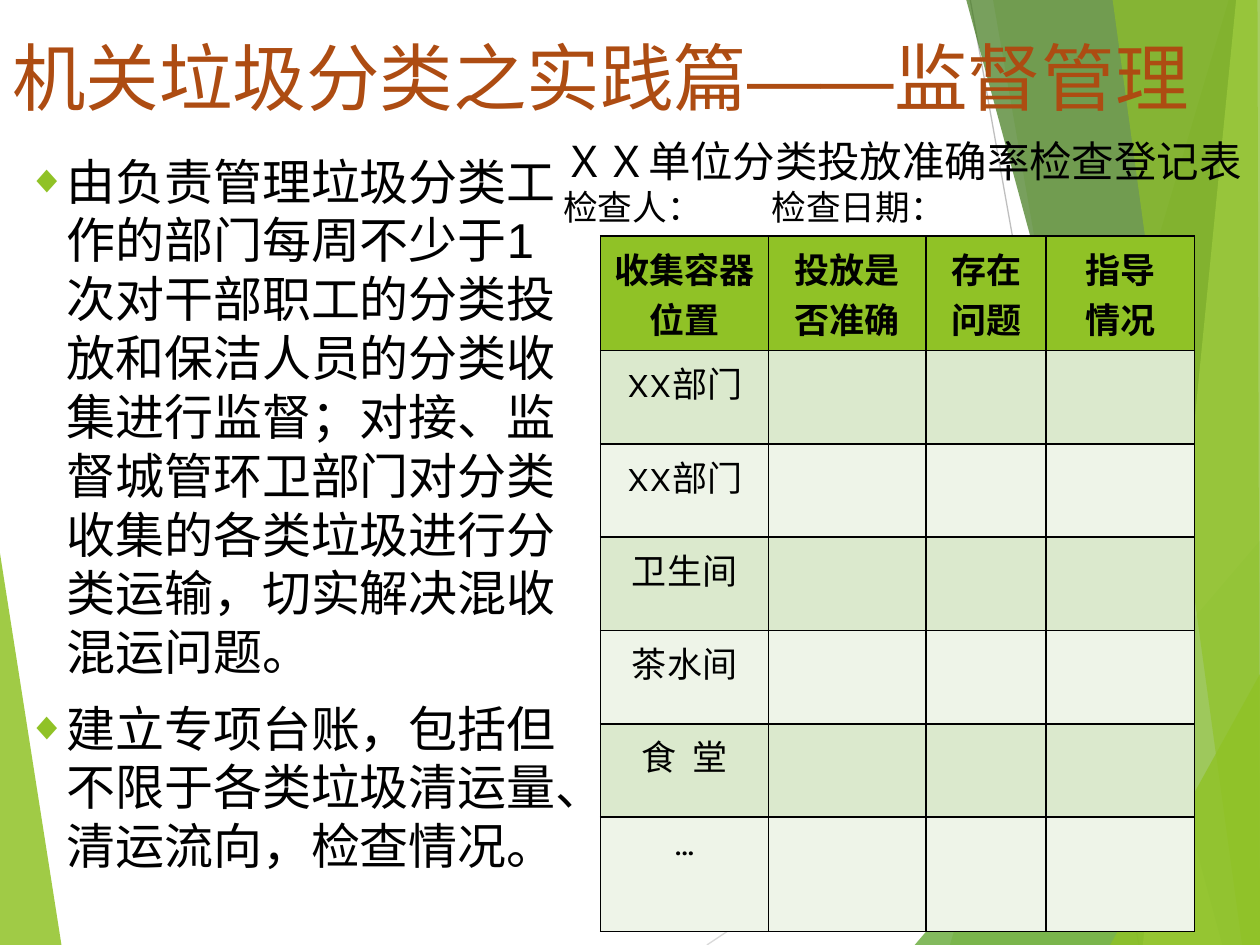
from lxml import etree
from pptx import Presentation
from pptx.dml.color import RGBColor
from pptx.enum.shapes import MSO_CONNECTOR
from pptx.enum.text import MSO_ANCHOR, MSO_AUTO_SIZE, PP_ALIGN
from pptx.oxml.ns import qn
from pptx.util import Cm, Pt

COLORS = {
    "lime": "90C226", "green": "54A021", "forest": "3F7819", "pale": "C0E474",
    "heading": "AD4C12", "black": "000000", "line": "BFBFBF", "light_line": "D9D9D9",
    "band_dark": "DBE9CD", "band_light": "EEF4E8",
}
CJK = "Noto Sans CJK SC"
FORMATS = {
    "heading": {"size": Pt(42), "name": "Arial"},
    "form_title": {"size": Pt(24.3), "name": CJK},
    "form_fields": {"size": Pt(19.8), "name": CJK},
    "body": {"size": Pt(28), "name": "Arial"},
    "header": {"size": Pt(20), "name": "Karla", "bold": True},
    "cell": {"size": Pt(20), "name": "Karla", "bold": False},
}


def add_run(paragraph, text, style, color="black", east_asian=CJK):
    run = paragraph.add_run()
    run.text = text
    for attribute, value in FORMATS[style].items():
        setattr(run.font, attribute, value)
    run.font.color.rgb = RGBColor.from_string(COLORS[color])
    properties = run.font._element
    latin = properties.find(qn("a:latin"))
    font = etree.Element(qn("a:ea"), typeface=east_asian)
    latin.addnext(font)


def add_child(parent, tag, **attributes):
    return etree.SubElement(parent, qn(tag), **attributes)


presentation = Presentation()
presentation.slide_width = Cm(25.4)
presentation.slide_height = Cm(19.05)
slide = presentation.slides.add_slide(presentation.slide_layouts[5])
shapes = slide.shapes

left_panel = ("lime", 85, [(0, 11.15), (1.24, 19.05), (0, 19.05)])
right_panels = [
    ("lime", 30, [(24.77, 0), (19.15, 19.05), (25.4, 19.05), (25.4, 0)]),
    ("lime", 20, [(20.02, 0), (23.34, 19.05), (25.4, 19.05), (25.4, 0)]),
    ("green", 72, [(18.44, 19.05), (25.4, 10.9), (25.4, 19.05)]),
    ("forest", 70, [(19.48, 0), (24.64, 19.05), (25.4, 19.05), (25.4, 0)]),
    ("pale", 70, [(24.92, 0), (23.04, 19.05), (25.4, 19.05), (25.4, 0)]),
    ("lime", 65, [(22.43, 0), (25.04, 19.05), (25.4, 19.05), (25.35, 0)]),
    ("lime", 80, [(22.38, 19.05), (25.4, 13.59), (25.4, 19.05)]),
]
thin_lines = [
    ("light_line", (14.25, 19.05, 25.4, 11.61)),
    ("line", (19.56, 0, 22.96, 19.05)),
]

for color, ends in thin_lines:
    connector = shapes.add_connector(MSO_CONNECTOR.STRAIGHT, *[Cm(end) for end in ends])
    connector.line.color.rgb = RGBColor.from_string(COLORS[color])
    connector.line.width = Pt(0.75)
    add_child(connector._element.spPr, "a:effectLst")

for color, opacity, corners in [left_panel] + right_panels:
    points = [(Cm(x), Cm(y)) for x, y in corners]
    builder = shapes.build_freeform(*points[0])
    builder.add_line_segments(points[1:], close=True)
    panel = builder.convert_to_shape()
    panel.shadow.inherit = False
    panel.fill.solid()
    panel.fill.fore_color.rgb = RGBColor.from_string(COLORS[color])
    panel.line.fill.background()
    fill_color = panel._element.spPr.find(qn("a:solidFill"))[0]
    add_child(fill_color, "a:alpha", val=str(opacity * 1000))

heading = shapes.add_textbox(Cm(0), Cm(0.53), Cm(25.4), Cm(2.06))
heading.text_frame.word_wrap = True
add_run(heading.text_frame.paragraphs[0], "机关垃圾分类之实践篇——监督管理",
        "heading", "heading", "Arial")

title = shapes.title
shapes._spTree.append(title._element)
title.left, title.top, title.width, title.height = Cm(11.1), Cm(2.59), Cm(14.3), Cm(2.13)
frame = title.text_frame
frame.word_wrap = True
frame.auto_size = MSO_AUTO_SIZE.NONE
frame.vertical_anchor = MSO_ANCHOR.MIDDLE
frame.margin_right = Cm(0)
paragraph = frame.paragraphs[0]
paragraph.alignment = PP_ALIGN.LEFT
paragraph.line_spacing = 1.0
tabs = add_child(paragraph._p.get_or_add_pPr(), "a:tabLst")
add_child(tabs, "a:tab", pos=str(Cm(4.2)), algn="l")
add_run(paragraph, "ＸＸ单位分类投放准确率检查登记表", "form_title")
paragraph.add_line_break()
add_run(paragraph, "检查人：\t检查日期：", "form_fields")

duties = [
    "由负责管理垃圾分类工作的部门每周不少于1次对干部职工的分类投放和保洁人员的分类收集进行监督；"
    "对接、监督城管环卫部门对分类收集的各类垃圾进行分类运输，切实解决混收混运问题。",
    "建立专项台账，包括但不限于各类垃圾清运量、清运流向，检查情况。",
]
body = shapes.add_textbox(Cm(0.3), Cm(2.92), Cm(11.2), Cm(15.8))
frame = body.text_frame
frame.word_wrap = True
for index, duty in enumerate(duties):
    paragraph = frame.add_paragraph() if index else frame.paragraphs[0]
    properties = paragraph._p.get_or_add_pPr()
    properties.set("marL", str(Cm(0.79)))
    properties.set("indent", str(Cm(-0.79)))
    bullet_color = add_child(properties, "a:buClr")
    add_child(bullet_color, "a:srgbClr", val=COLORS["lime"])
    add_child(properties, "a:buSzPct", val="80000")
    add_child(properties, "a:buFont", typeface="Arial")
    add_child(properties, "a:buChar", char="◆")
    paragraph.space_before = Pt(10 if index else 0)
    add_run(paragraph, duty, "body", east_asian="Arial")

headers = ["收集容器位置", "投放是否准确", "存在问题", "指导\n情况"]
places = ["XX部门", "XX部门", "卫生间", "茶水间", "食  堂", "…"]
column_widths = [3.38, 3.18, 2.42, 2.99]
row_heights = [2.31] + [1.88] * 5 + [2.31]
rows = [headers] + [[place, "", "", ""] for place in places]
table = shapes.add_table(len(rows), len(headers), Cm(12.11), Cm(4.76),
                         Cm(sum(column_widths)), Cm(sum(row_heights))).table
for column, width in zip(table.columns, column_widths):
    column.width = Cm(width)
for row_index, (row, height, texts) in enumerate(zip(table.rows, row_heights, rows)):
    row.height = Cm(height)
    band = "lime" if row_index == 0 else "band_dark" if row_index % 2 else "band_light"
    for cell, text in zip(row.cells, texts):
        properties = cell._tc.get_or_add_tcPr()
        for side in ("a:lnL", "a:lnR", "a:lnT", "a:lnB"):
            border = add_child(properties, side, w=str(Pt(1)))
            add_child(add_child(border, "a:solidFill"), "a:srgbClr", val=COLORS["black"])
        cell.fill.solid()
        cell.fill.fore_color.rgb = RGBColor.from_string(COLORS[band])
        for index, part in enumerate(text.split("\n")):
            frame = cell.text_frame
            paragraph = frame.add_paragraph() if index else frame.paragraphs[0]
            paragraph.alignment = PP_ALIGN.CENTER
            if part:
                add_run(paragraph, part, "cell" if row_index else "header")

presentation.save("out.pptx")
